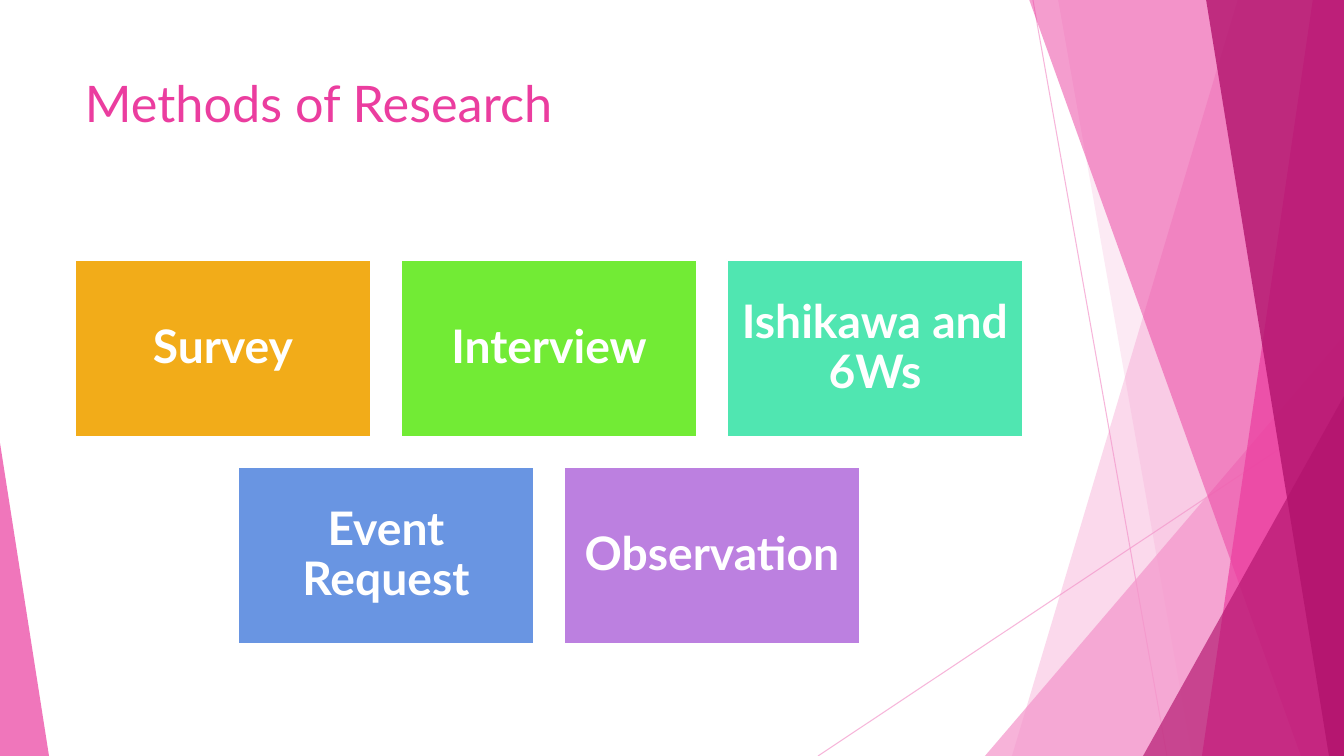
import pptx
import pptx.util
import pptx.dml.color
import pptx.enum.shapes
import pptx.enum.text
import pptx.oxml
import pptx.oxml.ns

PX = 914400 / 100.8  # EMU in one px
COLORS = {
    "light": "F496CB", "pink": "EB3D9F", "dark": "B2136D", "white": "FFFFFF",
    "orange": "F2AC19", "green": "72EB35", "teal": "50E6B1",
    "blue": "6995E2", "purple": "BC80E0",
}
WIDTH, HEIGHT = 1344, 756


def paint(fill, color, alpha=100):
    """Solid fill with an opacity in percent."""
    fill.solid()
    fill.fore_color.rgb = pptx.dml.color.RGBColor.from_string(COLORS[color])
    if alpha < 100:
        tone = fill._xPr.find(".//" + pptx.oxml.ns.qn("a:srgbClr"))
        opacity = pptx.oxml.parse_xml(
            f'<a:alpha {pptx.oxml.ns.nsdecls("a")} val="{alpha * 1000}"/>')
        tone.append(opacity)


def write(shape, text, size, color, bold=False, align="LEFT", anchor="TOP",
          spacing=1.0, inset_x=10, inset_y=5):
    frame = shape.text_frame
    frame.word_wrap = True
    frame.vertical_anchor = getattr(pptx.enum.text.MSO_ANCHOR, anchor)
    frame.margin_left = frame.margin_right = round(inset_x * PX)
    frame.margin_top = frame.margin_bottom = round(inset_y * PX)
    para = frame.paragraphs[0]
    para.alignment = getattr(pptx.enum.text.PP_ALIGN, align)
    para.line_spacing = spacing
    span = para.add_run()
    span.text = text
    span.font.name = "Lato"
    span.font.size = pptx.util.Pt(size)
    span.font.bold = bold
    span.font.color.rgb = pptx.dml.color.RGBColor.from_string(COLORS[color])


deck = pptx.Presentation()
deck.slide_width, deck.slide_height = round(WIDTH * PX), round(HEIGHT * PX)
page = deck.slides.add_slide(deck.slide_layouts[6])
shapes = page.shapes
kinds = pptx.enum.shapes.MSO_SHAPE

# Thin crossing lines
for ends in [(1033, 0, 1167, HEIGHT), (WIDTH, 406, 818, HEIGHT)]:
    line = shapes.add_connector(pptx.enum.shapes.MSO_CONNECTOR.STRAIGHT,
                                *[round(end * PX) for end in ends])
    line.line.width = pptx.util.Pt(0.75)
    paint(line.line.fill, "light", 70)
    line._element.spPr.append(
        pptx.oxml.parse_xml(f'<a:effectLst {pptx.oxml.ns.nsdecls("a")}/>'))

# Facets: bands (top x, bottom x) reach the right edge,
# triangles are (left, top, width, height, apex)
facets = [
    ((1238, 1012), "light", 36),
    ((1058, 1192), "light", 20),
    ((985, 336, 359, 420, 1), "light", 72),
    ((1029, 1301), "pink", 50),
    ((1313, 1202), "pink", 70),
    ((1206, 1329), "dark", 80),
    ((1143, 396, 201, 360, 1), "dark", 66),
    ((0, 443, 49, 313, 0), "pink", 70),
]
for outline, color, alpha in facets:
    if len(outline) == 2:
        top_x, bottom_x = outline
        builder = shapes.build_freeform(top_x, -1, scale=PX)
        builder.add_line_segments(
            [(WIDTH, -1), (WIDTH, HEIGHT), (bottom_x, HEIGHT)], close=True)
        facet = builder.convert_to_shape()
    else:
        *place, apex = outline
        facet = shapes.add_shape(kinds.ISOSCELES_TRIANGLE,
                                 *[round(length * PX) for length in place])
        facet.adjustments[0] = apex
    facet.shadow.inherit = False
    facet.line.fill.background()
    paint(facet.fill, color, alpha)

# Title
title = shapes.add_textbox(*[round(length * PX) for length in (75, 67, 948, 145)])
write(title, "Methods of Research", 36, "pink")

# Method boxes: rows centred on one another
BOX_WIDTH, BOX_HEIGHT, STEP_X, STEP_Y = 296, 177, 326, 207
rows = [
    [("Survey", "orange"), ("Interview", "green"), ("Ishikawa and 6Ws", "teal")],
    [("Event Request", "blue"), ("Observation", "purple")],
]
for row, methods in enumerate(rows):
    for column, (method, color) in enumerate(methods):
        left = 75 + row * STEP_X // 2 + column * STEP_X
        top = 260 + row * STEP_Y
        box = shapes.add_shape(
            kinds.RECTANGLE,
            *[round(length * PX) for length in (left, top, BOX_WIDTH, BOX_HEIGHT)])
        box.shadow.inherit = False
        paint(box.fill, color)
        paint(box.line.fill, "white")
        box.line.width = pptx.util.Pt(1.5)
        write(box, method, 33, "white", bold=True, align="CENTER",
              anchor="MIDDLE", spacing=0.9, inset_x=14, inset_y=14)

deck.save("out.pptx")
